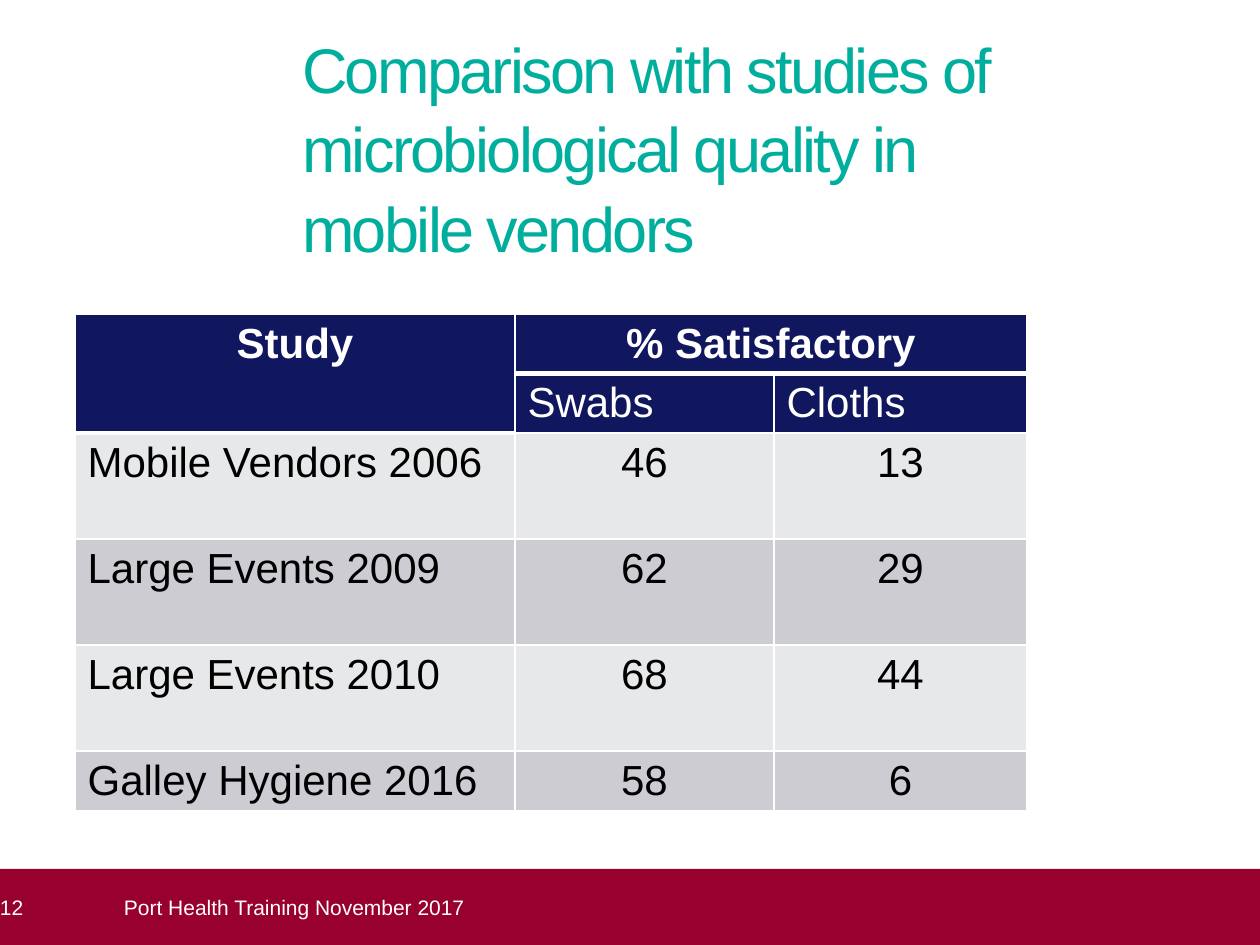
from dataclasses import dataclass

import pptx
import pptx.dml.color
import pptx.enum.shapes
import pptx.enum.text
import pptx.oxml.ns
import pptx.util
from lxml import etree

ALIGN = pptx.enum.text.PP_ALIGN
ANCHOR = pptx.enum.text.MSO_ANCHOR


@dataclass(frozen=True)
class Theme:
    font: str = "Arial"
    teal: str = "00AE9E"
    navy: str = "11175E"
    light: str = "E7E8EA"
    dark: str = "CCCCD2"
    red: str = "98002E"
    white: str = "FFFFFF"
    black: str = "000000"
    title: int = 36
    table: int = 24
    foot: int = 12
    thin: int = 1
    thick: int = 3


@dataclass(frozen=True)
class Box:
    left: int
    top: int
    width: int
    height: int


@dataclass(frozen=True)
class Study:
    name: str
    swabs: int
    cloths: int


THEME = Theme()
STUDIES = [
    Study("Mobile Vendors 2006", 46, 13),
    Study("Large Events 2009", 62, 29),
    Study("Large Events 2010", 68, 44),
    Study("Galley Hygiene 2016", 58, 6),
]
COLS = [440, 259, 253]
ROWS = [59, 59, 106, 106, 106, 59]
# Cells with a thick line below them
HEAVY = {(0, 0), (0, 1), (0, 2), (1, 0)}


def px(count: int) -> int:
    return round(count * 914400 / 126)


def rgb(code: str) -> pptx.dml.color.RGBColor:
    return pptx.dml.color.RGBColor.from_string(code)


def place(shape, box: Box) -> None:
    shape.left, shape.top = px(box.left), px(box.top)
    shape.width, shape.height = px(box.width), px(box.height)


def setup(frame, anchor, right: int = 0) -> None:
    frame.word_wrap = True
    frame.auto_size = pptx.enum.text.MSO_AUTO_SIZE.NONE
    frame.vertical_anchor = anchor
    frame.margin_left = frame.margin_top = frame.margin_bottom = 0
    frame.margin_right = px(right)


def write(para, text: str, size: int, color: str, bold: bool = False,
          align=ALIGN.LEFT):
    para.alignment = align
    run = para.add_run()
    run.text = text
    run.font.name = THEME.font
    run.font.size = pptx.util.Pt(size)
    run.font.bold = bold
    run.font.color.rgb = rgb(color)
    return run


def edge(cell, side: str, width: int) -> None:
    qn = pptx.oxml.ns.qn
    props = cell._tc.get_or_add_tcPr()
    line = etree.SubElement(props, qn(f"a:ln{side}"), w=str(pptx.util.Pt(width)))
    fill = etree.SubElement(line, qn("a:solidFill"))
    etree.SubElement(fill, qn("a:srgbClr"), val=THEME.white)


def style(cell, row: int, col: int) -> None:
    above = THEME.thick if (row - 1, col) in HEAVY else THEME.thin
    below = THEME.thick if (row, col) in HEAVY else THEME.thin
    sides = {"L": THEME.thin, "R": THEME.thin, "T": above, "B": below}
    for side, width in sides.items():
        edge(cell, side, width)
    band = THEME.light if row % 2 == 0 else THEME.dark
    cell.fill.solid()
    cell.fill.fore_color.rgb = rgb(THEME.navy if row < 2 else band)


def add_title(slide) -> None:
    title = slide.shapes.title
    place(title, Box(302, 37, 824, 228))
    setup(title.text_frame, ANCHOR.BOTTOM)
    para = title.text_frame.paragraphs[0]
    para.line_spacing = 1.05
    lines = ["Comparison with studies of", "microbiological quality in",
             "mobile vendors"]
    for index, text in enumerate(lines):
        if index:
            para.add_line_break()
        run = write(para, text, THEME.title, THEME.teal)
        run.font._element.set("spc", "-150")


def add_table(slide) -> None:
    box = Box(75, 314, sum(COLS), sum(ROWS))
    frame = slide.shapes.add_table(len(ROWS), len(COLS), 0, 0, px(box.width),
                                   px(box.height))
    place(frame, box)
    table = frame.table
    table.first_row = table.horz_banding = False
    for col, width in zip(table.columns, COLS):
        col.width = px(width)
    for row, height in zip(table.rows, ROWS):
        row.height = px(height)
    table.cell(0, 0).merge(table.cell(1, 0))
    table.cell(0, 1).merge(table.cell(0, 2))
    grid = [["Study", "% Satisfactory", ""], ["", "Swabs", "Cloths"]]
    grid += [[item.name, str(item.swabs), str(item.cloths)] for item in STUDIES]
    for row, texts in enumerate(grid):
        for col, text in enumerate(texts):
            cell = table.cell(row, col)
            style(cell, row, col)
            if text:
                mid = row == 0 or (row > 1 and col > 0)
                write(cell.text_frame.paragraphs[0], text, THEME.table,
                      THEME.white if row < 2 else THEME.black, row == 0,
                      ALIGN.CENTER if mid else ALIGN.LEFT)


def add_footer(slide) -> None:
    bar = slide.shapes.add_shape(pptx.enum.shapes.MSO_SHAPE.RECTANGLE, 0, 0, 0, 0)
    place(bar, Box(0, 869, 1260, 76))
    bar.shadow.inherit = False
    bar.fill.solid()
    bar.fill.fore_color.rgb = rgb(THEME.red)
    bar.line.fill.background()
    note = slide.shapes.add_textbox(0, 0, 0, 0)
    place(note, Box(124, 869, 1111, 76))
    parts = [(bar, "12", 13), (note, "Port Health Training November 2017", 0)]
    for shape, text, right in parts:
        setup(shape.text_frame, ANCHOR.MIDDLE, right)
        write(shape.text_frame.paragraphs[0], text, THEME.foot, THEME.white)


def main() -> None:
    deck = pptx.Presentation()
    deck.slide_width, deck.slide_height = px(1260), px(945)
    slide = deck.slides.add_slide(deck.slide_layouts[5])
    add_title(slide)
    add_table(slide)
    add_footer(slide)
    deck.save("out.pptx")


if __name__ == "__main__":
    main()
